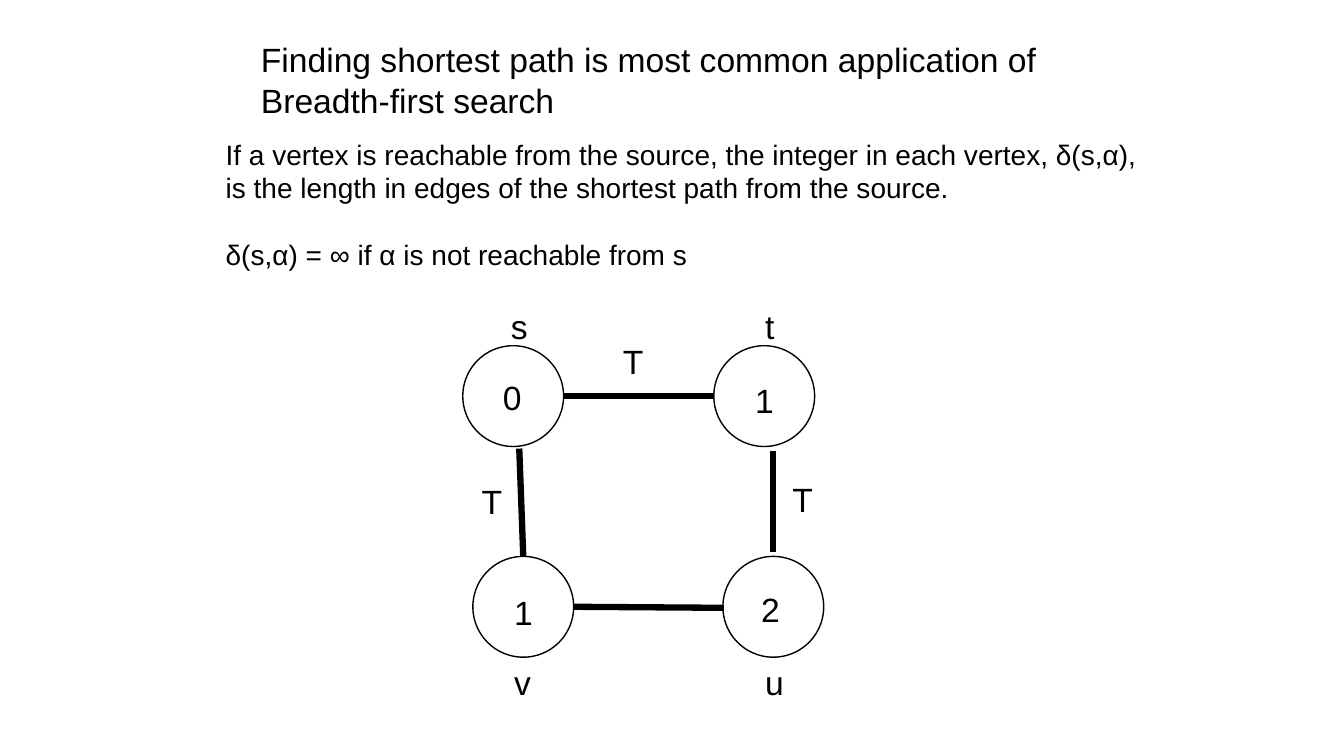
"""Builds a slide on shortest paths found by breadth-first search."""
from pptx import Presentation
from pptx.dml.color import RGBColor
from pptx.enum.shapes import MSO_CONNECTOR, MSO_SHAPE
from pptx.enum.text import MSO_AUTO_SIZE
from pptx.oxml.ns import qn
from pptx.util import Pt

PX = 9144
OVAL = MSO_SHAPE.OVAL
STRAIGHT = MSO_CONNECTOR.STRAIGHT
GROW = MSO_AUTO_SIZE.SHAPE_TO_FIT_TEXT
THEME = {
    "font": "Arial",
    "ink": RGBColor(0, 0, 0),
    "paper": RGBColor(255, 255, 255),
    "large": Pt(24),
    "body": Pt(20),
    "gap": Pt(24),
    "outline": Pt(1),
    "edge": Pt(4.5),
}

deck = Presentation()
deck.slide_width, deck.slide_height = 1333 * PX, 750 * PX
page = deck.slides.add_slide(deck.slide_layouts[6])


def add_text(text, left, top, width, height, size=THEME["large"], last_gap=None):
    box = page.shapes.add_textbox(left * PX, top * PX, width * PX, height * PX)
    frame = box.text_frame
    frame.word_wrap = False
    frame.auto_size = GROW
    frame.text = text
    for para in frame.paragraphs:
        for span in para.runs:
            span.font.name = THEME["font"]
            span.font.size = size
            span.font.color.rgb = THEME["ink"]
    if last_gap is not None:
        frame.paragraphs[-1].space_before = last_gap


DIAMETER = 100
for left, top in [(459, 343), (708, 343), (469, 552), (717, 552)]:
    vertex = page.shapes.add_shape(OVAL, left * PX, top * PX, DIAMETER * PX, DIAMETER * PX)
    vertex.shadow.inherit = False
    vertex.fill.solid()
    vertex.fill.fore_color.rgb = THEME["paper"]
    vertex.line.color.rgb = THEME["ink"]
    vertex.line.width = THEME["outline"]

EDGES = [
    (559, 393, 708, 393),
    (767, 548, 767, 447),
    (515, 445, 519, 552),
    (569, 602, 718, 603),
]
for ends in EDGES:
    edge = page.shapes.add_connector(STRAIGHT, *(end * PX for end in ends))
    edge.line.color.rgb = THEME["ink"]
    edge.line.width = THEME["edge"]
    properties = edge._element.spPr
    properties.append(properties.makeelement(qn("a:effectLst"), {}))

LABELS = [
    ("t", 749, 299, 30), ("s", 497, 299, 37), ("u", 749, 652, 39), ("v", 500, 652, 37),
    ("0", 489, 369, 39), ("1", 739, 372, 39), ("1", 500, 582, 39), ("2", 745, 579, 39),
    ("T", 608, 333, 41), ("T", 468, 472, 34), ("T", 776, 470, 41),
]
for letter, left, top, width in LABELS:
    add_text(letter, left, top, width, 51)

add_text(
    "Finding shortest path is most common application of\nBreadth-first search",
    249, 34, 806, 91,
)
add_text(
    "If a vertex is reachable from the source, the integer in each vertex, δ(s,α),\n"
    "is the length in edges of the shortest path from the source.\n"
    "δ(s,α) = ∞ if α is not reachable from s",
    214, 131, 937, 145, size=THEME["body"], last_gap=THEME["gap"],
)

deck.save("out.pptx")
